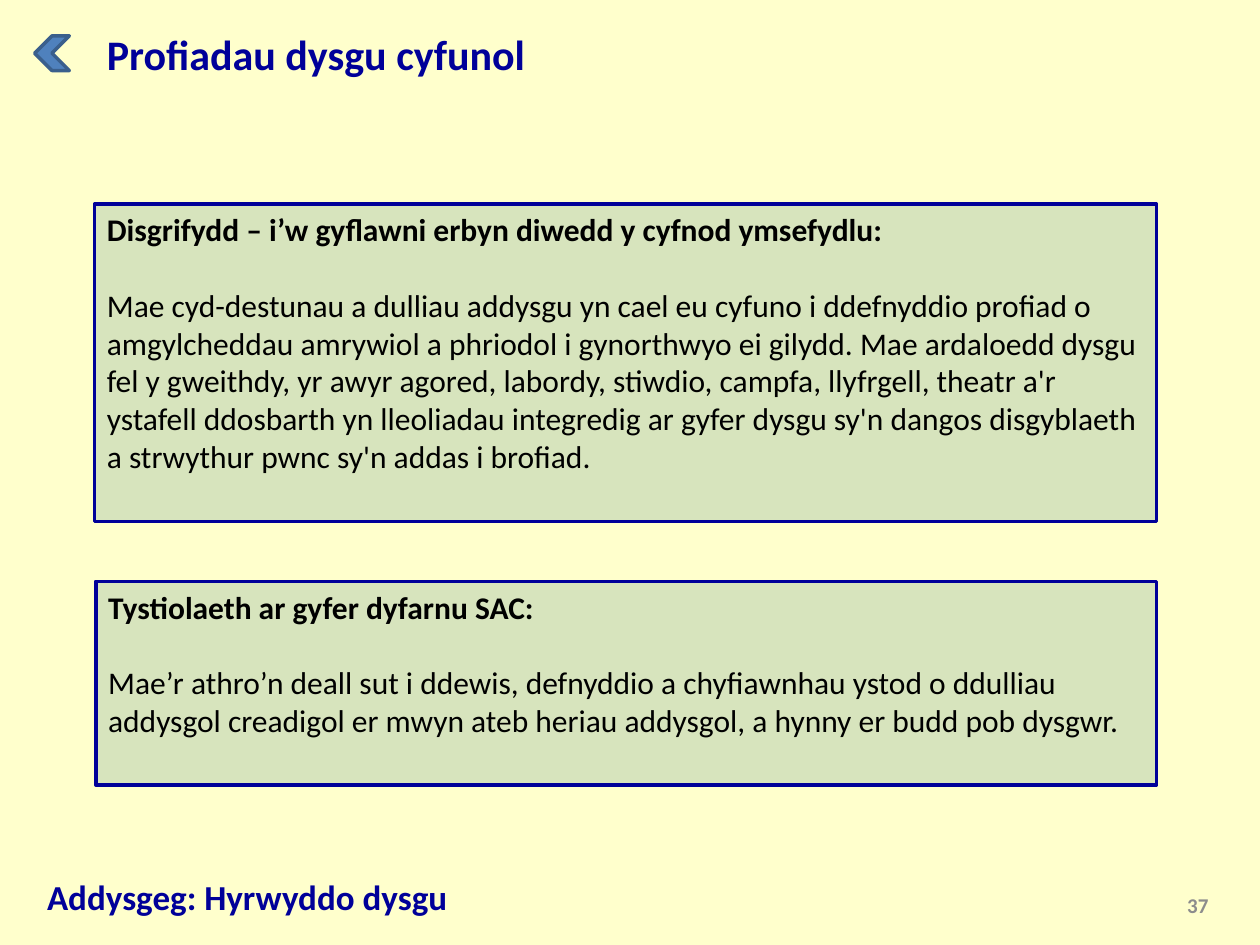
from pptx import Presentation
from pptx.dml.color import RGBColor
from pptx.enum.shapes import MSO_SHAPE
from pptx.enum.text import MSO_ANCHOR, PP_ALIGN
from pptx.util import Inches, Pt

COLS, ROWS, UNIT = 40, 30, 0.25  # square grid, quarter-inch cells


def color(hex_value):
    return RGBColor.from_string(hex_value)


class SlideBuilder:
    FONT = "Calibri"
    PAPER, PANEL, NAVY = "FFFFCC", "D7E4BD", "000099"
    BLACK, GREY = "000000", "8C8C8C"
    ARROW, ARROW_EDGE = "4F81BD", "3A5F8C"

    def __init__(self, prs):
        self.slide = prs.slides.add_slide(prs.slide_layouts[6])
        fill = self.slide.background.fill
        fill.solid()
        fill.fore_color.rgb = color(self.PAPER)

    def cells(self, *grid):
        return [Inches(UNIT * n) for n in grid]

    def run(self, p, text, size, ink, bold=True):
        r = p.add_run()
        r.text = text
        r.font.name = self.FONT
        r.font.size = Pt(size)
        r.font.bold = bold
        r.font.color.rgb = color(ink)

    def label(self, grid, text, size, ink, align=PP_ALIGN.LEFT, anchor=MSO_ANCHOR.TOP):
        tf = self.slide.shapes.add_textbox(*self.cells(*grid)).text_frame
        tf.word_wrap = True
        tf.vertical_anchor = anchor
        p = tf.paragraphs[0]
        p.alignment = align
        self.run(p, text, size, ink)

    def shape(self, kind, grid, fill, line):
        sp = self.slide.shapes.add_shape(kind, *self.cells(*grid))
        sp.shadow.inherit = False
        sp.fill.solid()
        sp.fill.fore_color.rgb = color(fill)
        sp.line.color.rgb = color(line)
        sp.line.width = Pt(2)
        return sp

    def panel(self, grid, heading, body):
        sp = self.shape(MSO_SHAPE.RECTANGLE, grid, self.PANEL, self.NAVY)
        tf = sp.text_frame
        tf.word_wrap = True
        tf.vertical_anchor = MSO_ANCHOR.TOP
        p = tf.paragraphs[0]
        p.space_after = Pt(21.5)
        self.run(p, heading, 18, self.BLACK)
        self.run(tf.add_paragraph(), body, 18, self.BLACK, bold=False)
        for p in tf.paragraphs:
            p.alignment = PP_ALIGN.LEFT

    def back_arrow(self, grid):
        sp = self.shape(MSO_SHAPE.CHEVRON, grid, self.ARROW, self.ARROW_EDGE)
        sp.rotation = 180


def main():
    prs = Presentation()
    prs.slide_width = Inches(COLS * UNIT)
    prs.slide_height = Inches(ROWS * UNIT)

    s = SlideBuilder(prs)
    s.label((1.1, 27.6, 36.1, 1.75), "Addysgeg: Hyrwyddo dysgu", 20, s.NAVY)
    s.panel(
        (3, 6.48, 33.72, 10.08),
        "Disgrifydd – i’w gyflawni erbyn diwedd y cyfnod ymsefydlu:",
        "Mae cyd-destunau a dulliau addysgu yn cael eu cyfuno i ddefnyddio profiad o "
        "amgylcheddau amrywiol a phriodol i gynorthwyo ei gilydd. Mae ardaloedd dysgu "
        "fel y gweithdy, yr awyr agored, labordy, stiwdio, campfa, llyfrgell, theatr a'r "
        "ystafell ddosbarth yn lleoliadau integredig ar gyfer dysgu sy'n dangos "
        "disgyblaeth a strwythur pwnc sy'n addas i brofiad.",
    )
    s.panel(
        (3.04, 18.46, 33.68, 6.46),
        "Tystiolaeth ar gyfer dyfarnu SAC:",
        "Mae’r athro’n deall sut i ddewis, defnyddio a chyfiawnhau ystod o ddulliau "
        "addysgol creadigol er mwyn ateb heriau addysgol, a hynny er budd pob dysgwr.",
    )
    s.back_arrow((1.1, 1.14, 1.1, 1.1))
    s.label((3, 0.7, 19.84, 2), "Profiadau dysgu cyfunol", 24, s.NAVY)
    s.label((29.44, 27.92, 9.32, 1.6), "37", 12, s.GREY, PP_ALIGN.RIGHT, MSO_ANCHOR.MIDDLE)

    prs.save("out.pptx")


if __name__ == "__main__":
    main()
